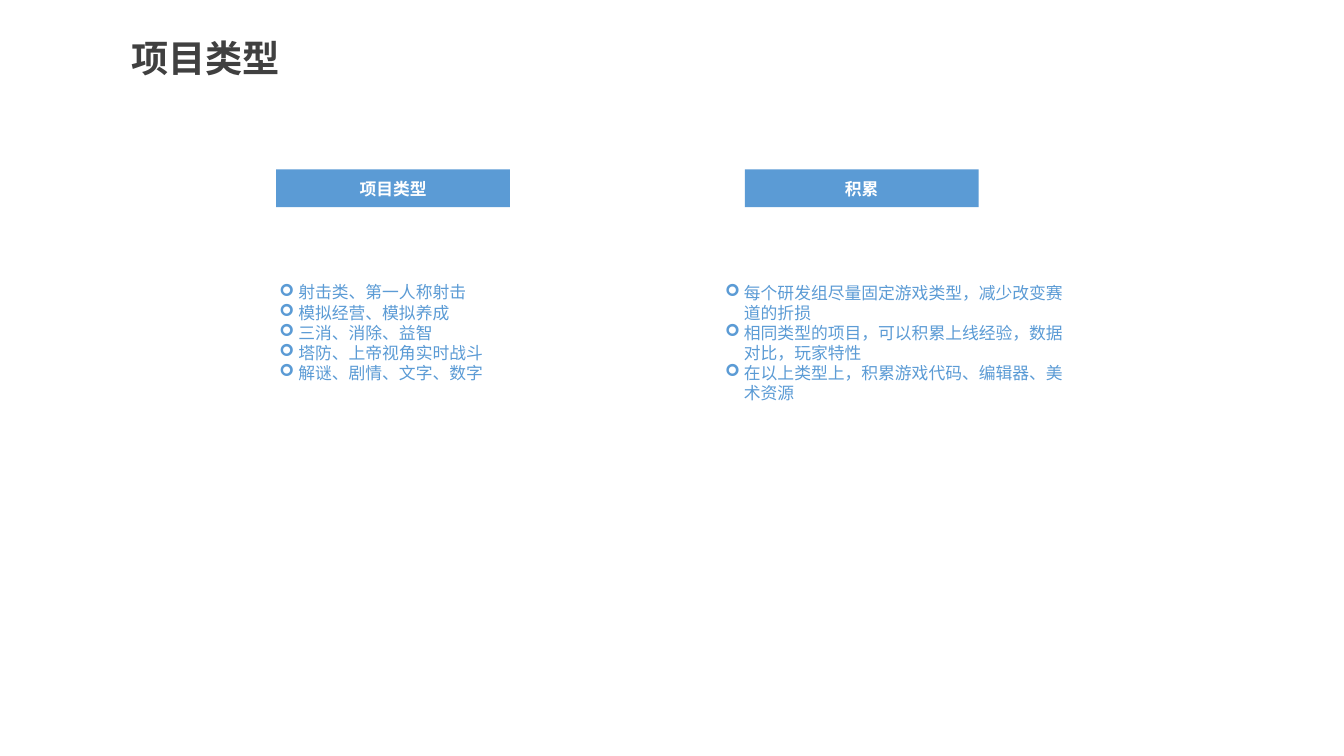
from dataclasses import dataclass

import lxml.etree
import pptx
import pptx.dml.color
import pptx.enum.shapes
import pptx.enum.text
import pptx.oxml.ns
import pptx.util

Pt = pptx.util.Pt
FONT = "Noto Sans CJK SC"
BLUE = pptx.dml.color.RGBColor(0x5B, 0x9B, 0xD5)
WHITE = pptx.dml.color.RGBColor(0xFF, 0xFF, 0xFF)
DARK_GREY = pptx.dml.color.RGBColor(0x40, 0x40, 0x40)

HEADING_TOP, HEADING_WIDTH, HEADING_HEIGHT = 121, 167, 27
LIST_TOP, LINE_HEIGHT = 201.6, 14.5
LIST_INDENT, HANGING = 49.7, 13.5


@dataclass
class Topic:
    heading: str
    heading_left: float
    list_left: float
    list_width: float
    line_count: int
    items: list[str]


TOPICS = [
    Topic("项目类型", 197.3, 163.4, 234, 5, [
        "射击类、第一人称射击",
        "模拟经营、模拟养成",
        "三消、消除、益智",
        "塔防、上帝视角实时战斗",
        "解谜、剧情、文字、数字",
    ]),
    Topic("积累", 532, 481.7, 286.6, 6, [
        "每个研发组尽量固定游戏类型，减少改变赛道的折损",
        "相同类型的项目，可以积累上线经验，数据对比，玩家特性",
        "在以上类型上，积累游戏代码、编辑器、美术资源",
    ]),
]


def format_paragraph(paragraph, size: float, color, bold: bool = False) -> None:
    font = paragraph.font
    font.name, font.size, font.bold = FONT, Pt(size), bold
    font.color.rgb = color
    # East Asian text takes its own typeface element
    latin = paragraph._p.pPr.find(".//" + pptx.oxml.ns.qn("a:latin"))
    east_asian = lxml.etree.Element(pptx.oxml.ns.qn("a:ea"), typeface=FONT)
    latin.addnext(east_asian)


def add_bullet(paragraph) -> None:
    properties = paragraph._p.get_or_add_pPr()
    properties.set("marL", str(Pt(LIST_INDENT)))
    properties.set("indent", str(-Pt(HANGING)))
    lxml.etree.SubElement(properties, pptx.oxml.ns.qn("a:buFont"), typeface="Wingdings")
    lxml.etree.SubElement(properties, pptx.oxml.ns.qn("a:buChar"), char="➢")


def add_heading(slide, topic: Topic) -> None:
    bar = slide.shapes.add_shape(
        pptx.enum.shapes.MSO_SHAPE.RECTANGLE,
        Pt(topic.heading_left), Pt(HEADING_TOP), Pt(HEADING_WIDTH), Pt(HEADING_HEIGHT))
    bar.shadow.inherit = False
    bar.fill.solid()
    bar.fill.fore_color.rgb = BLUE
    bar.line.fill.background()
    frame = bar.text_frame
    frame.text = topic.heading
    frame.vertical_anchor = pptx.enum.text.MSO_ANCHOR.MIDDLE
    paragraph = frame.paragraphs[0]
    paragraph.alignment = pptx.enum.text.PP_ALIGN.CENTER
    format_paragraph(paragraph, 12, WHITE, bold=True)


def add_list(slide, topic: Topic) -> None:
    box = slide.shapes.add_textbox(
        Pt(topic.list_left), Pt(LIST_TOP),
        Pt(topic.list_width), Pt(LINE_HEIGHT * topic.line_count))
    frame = box.text_frame
    frame.word_wrap = True
    frame.margin_left = frame.margin_top = frame.margin_right = frame.margin_bottom = 0
    frame.text = "\n".join(topic.items)
    for paragraph in frame.paragraphs:
        paragraph.level = 1
        add_bullet(paragraph)
        format_paragraph(paragraph, 12, BLUE)


def add_title(slide, text: str) -> None:
    title = slide.shapes.title
    title.left, title.top, title.width, title.height = Pt(86.4), Pt(21.6), Pt(121), Pt(39.6)
    frame = title.text_frame
    frame.text = text
    frame.word_wrap = False
    frame.auto_size = pptx.enum.text.MSO_AUTO_SIZE.SHAPE_TO_FIT_TEXT
    frame.vertical_anchor = pptx.enum.text.MSO_ANCHOR.MIDDLE
    paragraph = frame.paragraphs[0]
    paragraph.alignment = pptx.enum.text.PP_ALIGN.LEFT
    format_paragraph(paragraph, 26.6, DARK_GREY, bold=True)


def main() -> None:
    presentation = pptx.Presentation()
    presentation.slide_width, presentation.slide_height = Pt(960), Pt(540)
    slide = presentation.slides.add_slide(presentation.slide_layouts.get_by_name("Title Only"))

    # Title
    add_title(slide, "项目类型")

    # Headings with their lists
    for topic in TOPICS:
        add_heading(slide, topic)
        add_list(slide, topic)

    presentation.save("out.pptx")


if __name__ == "__main__":
    main()
